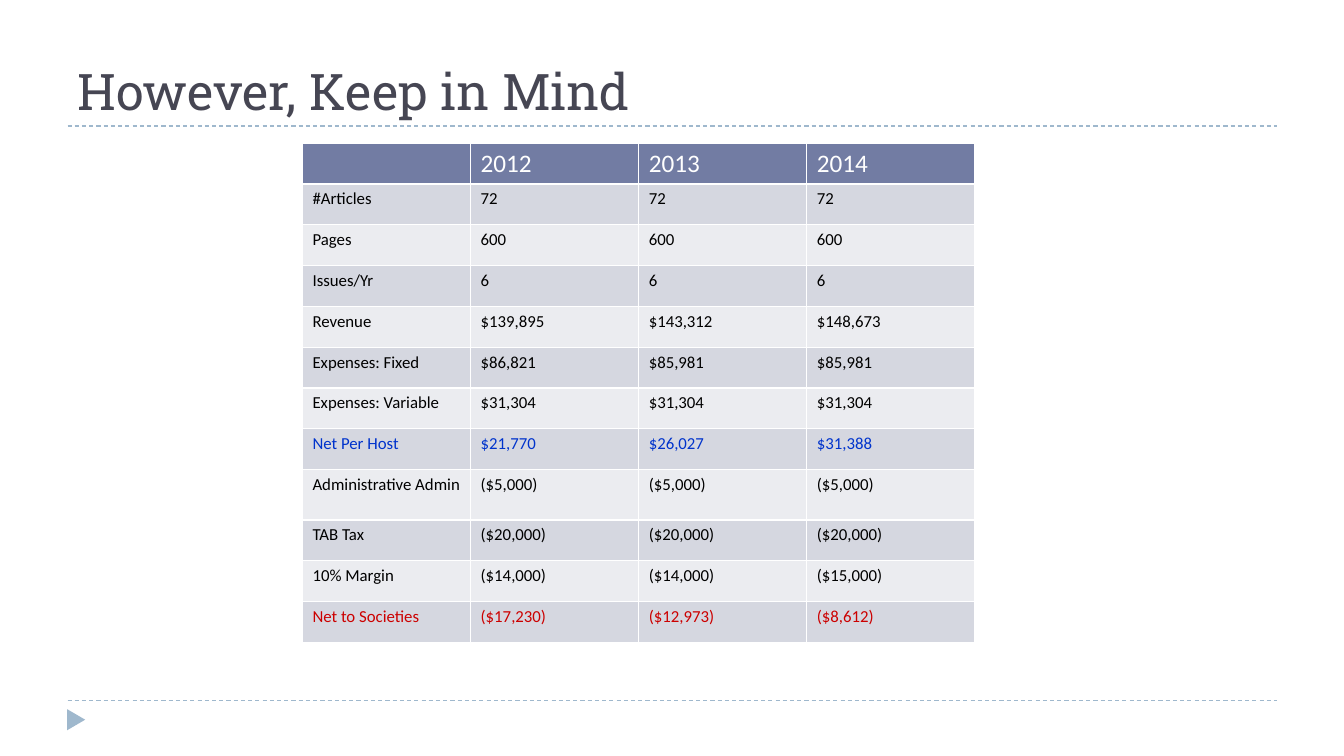
from pptx import Presentation
from pptx.dml.color import RGBColor
from pptx.enum.dml import MSO_LINE
from pptx.enum.shapes import MSO_CONNECTOR, MSO_SHAPE
from pptx.enum.text import MSO_ANCHOR
from pptx.oxml.ns import qn
from pptx.util import Inches, Pt
from lxml.etree import SubElement

ACCENT = "9FB8CD"
HEAD = "727CA3"
BANDS = ("D5D7E0", "EBECF0")
ROW, TALL = 0.405, 0.5

YEARS = ("", "2012", "2013", "2014")
LINES = [
    ("#Articles", "72", "72", "72"),
    ("Pages", "600", "600", "600"),
    ("Issues/Yr", "6", "6", "6"),
    ("Revenue", "$139,895", "$143,312", "$148,673"),
    ("Expenses: Fixed", "$86,821", "$85,981", "$85,981"),
    ("Expenses: Variable", "$31,304", "$31,304", "$31,304"),
    ("Net Per Host", "$21,770", "$26,027", "$31,388"),
    ("Administrative Admin", "($5,000)", "($5,000)", "($5,000)"),
    ("TAB Tax", "($20,000)", "($20,000)", "($20,000)"),
    ("10% Margin", "($14,000)", "($14,000)", "($15,000)"),
    ("Net to Societies", "($17,230)", "($12,973)", "($8,612)"),
]
INKS = {"Net Per Host": "0033CC", "Net to Societies": "CC0000"}


def paint(fill, color):
    fill.solid()
    fill.fore_color.rgb = RGBColor.from_string(color)


def write(frame, text, size=12, font="Calibri", color="000000"):
    run = frame.paragraphs[0].add_run()
    run.text = text
    run.font.size = Pt(size)
    run.font.name = font
    run.font.bold = False
    run.font.color.rgb = RGBColor.from_string(color)


def add_title(slide, text):
    box = slide.shapes.add_textbox(Inches(0.67), Inches(0.17), Inches(12), Inches(1.08))
    frame = box.text_frame
    frame.word_wrap = True
    frame.vertical_anchor = MSO_ANCHOR.BOTTOM
    write(frame, text, size=36, font="Roboto Slab", color="464653")


def add_rule(slide, top):
    rule = slide.shapes.add_connector(
        MSO_CONNECTOR.STRAIGHT, Inches(0.67), Inches(top), Inches(12.67), Inches(top))
    paint(rule.line.fill, ACCENT)
    rule.line.width = Pt(0.75)
    rule.line.dash_style = MSO_LINE.DASH
    SubElement(rule._element.spPr, qn("a:effectLst"))


def add_marker(slide):
    mark = slide.shapes.add_shape(
        MSO_SHAPE.ISOSCELES_TRIANGLE, Inches(0.65), Inches(7.05), Inches(0.21), Inches(0.18))
    mark.rotation = 90
    mark.shadow.inherit = False
    paint(mark.fill, ACCENT)
    mark.line.fill.background()


def fill_row(table, index, texts, fill, **style):
    for cell, text in zip(table.rows[index].cells, texts):
        paint(cell.fill, fill)
        if text:
            write(cell.text_frame, text, **style)


def add_budget(slide):
    count = len(LINES) + 1
    height = ROW * (count - 1) + TALL
    table = slide.shapes.add_table(
        count, len(YEARS), Inches(3), Inches(1.42), Inches(6.67), Inches(height)).table
    for row in table.rows:
        row.height = Inches(ROW)
    fill_row(table, 0, YEARS, HEAD, size=18, color="FFFFFF")
    for index, line in enumerate(LINES, 1):
        label = line[0]
        if label == "Administrative Admin":
            table.rows[index].height = Inches(TALL)
        fill_row(table, index, line, BANDS[(index - 1) % 2],
                 color=INKS.get(label, "000000"))


def main():
    deck = Presentation()
    deck.slide_width, deck.slide_height = Inches(13.33), Inches(7.5)
    slide = deck.slides.add_slide(deck.slide_layouts[6])
    for top in (6.95, 1.25):
        add_rule(slide, top)
    add_marker(slide)
    add_title(slide, "However, Keep in Mind")
    add_budget(slide)
    deck.save("out.pptx")


if __name__ == "__main__":
    main()
